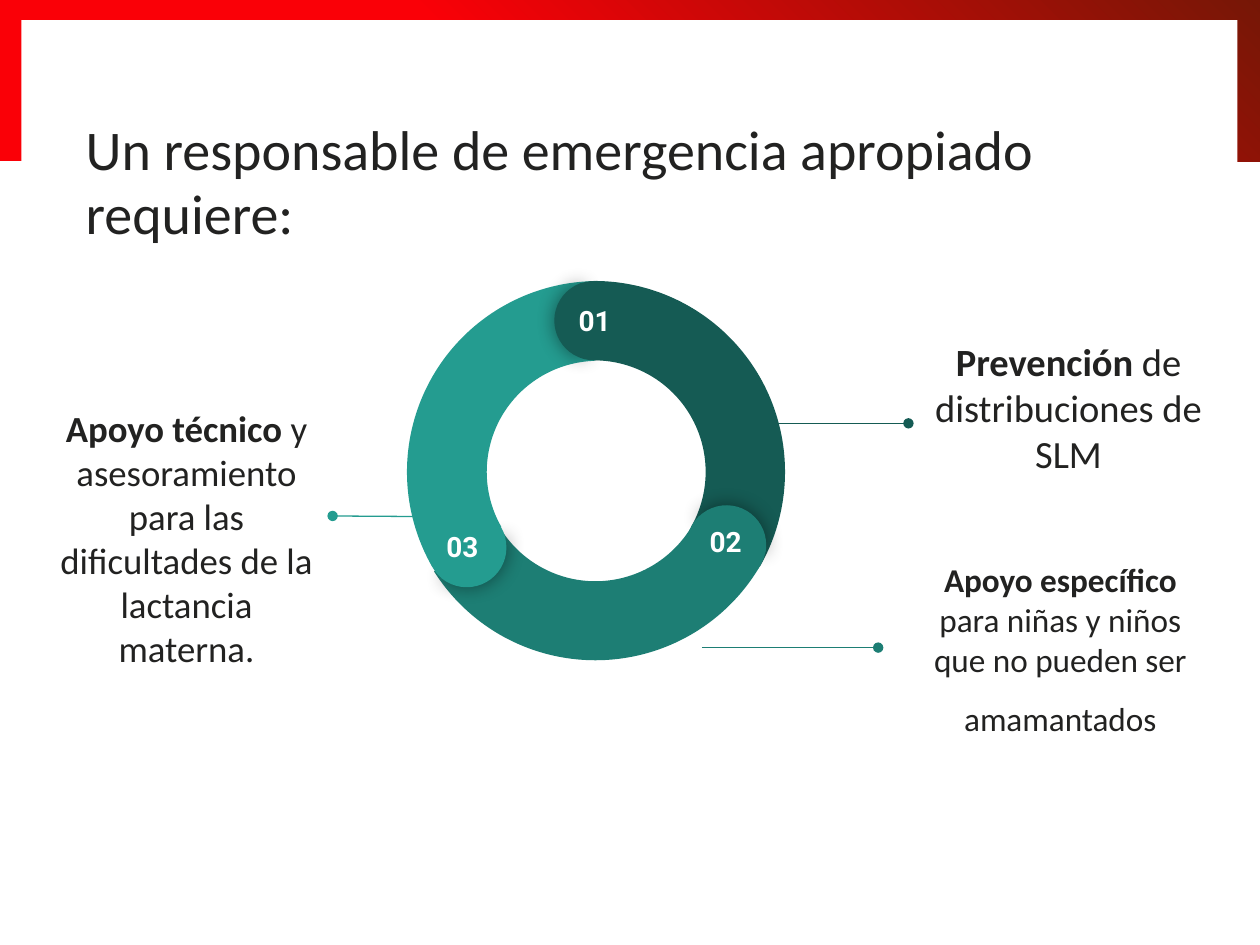
from lxml import etree
from pptx import Presentation
from pptx.dml.color import RGBColor
from pptx.enum.shapes import MSO_CONNECTOR, MSO_SHAPE
from pptx.enum.text import MSO_ANCHOR as Anchor, PP_ALIGN as Align
from pptx.oxml import parse_xml
from pptx.oxml.ns import nsdecls, qn
from pptx.util import Inches, Pt

INK, WHITE = "222221", "FFFFFF"
DARK, MIDDLE, LIGHT = "155B54", "1D7E74", "249C90"
rgb = RGBColor.from_string

deck = Presentation()
deck.slide_width, deck.slide_height = Inches(10), Inches(7.5)
page = deck.slides.add_slide(deck.slide_layouts[6])
shapes = page.shapes


def add_text(paragraphs, at, size, font="Calibri", color=INK, align=Align.CENTER,
             anchor=Anchor.TOP, insets=(0.1, 0.1, 0.1, 0.1), line_spacing=None, gap=0):
    """Each paragraph is a list of (text, bold) pairs; insets run left, top, right, bottom."""
    box = shapes.add_textbox(*map(Inches, at))
    frame = box.text_frame
    frame.word_wrap = True
    frame.vertical_anchor = anchor
    (frame.margin_left, frame.margin_top,
     frame.margin_right, frame.margin_bottom) = map(Inches, insets)
    for index, pieces in enumerate(paragraphs):
        para = frame.add_paragraph() if index else frame.paragraphs[0]
        para.alignment = align
        if line_spacing:
            para.line_spacing = line_spacing
        if index:
            para.space_before = Pt(gap)
        for text, bold in pieces:
            span = para.add_run()
            span.text = text
            span.font.name, span.font.size, span.font.bold = font, Pt(size), bold
            span.font.color.rgb = rgb(color)
    return box


def add_shape(preset, at, color, rotation=0, adjustments=()):
    shape = shapes.add_shape(preset, *map(Inches, at))
    shape.shadow.inherit = False
    shape.fill.solid()
    shape.fill.fore_color.rgb = rgb(color)
    shape.line.fill.background()
    shape.rotation = rotation
    for index, value in enumerate(adjustments):
        shape.adjustments[index] = value
    return shape


# Gradient frame along the top, with the white page area over it
frame_band = add_shape(MSO_SHAPE.RECTANGLE, (0, 0, 10, 1.28), "FA0007")
stops = "".join(
    f'<a:gs pos="{percent * 1000}"><a:srgbClr val="{color}"/></a:gs>'
    for percent, color in ((0, "FA0007"), (40, "FA0007"), (100, "761706")))
solid = frame_band.element.spPr.find(qn("a:solidFill"))
solid.getparent().replace(solid, parse_xml(
    f'<a:gradFill {nsdecls("a")} rotWithShape="1"><a:gsLst>{stops}</a:gsLst>'
    '<a:lin ang="18900000" scaled="0"/></a:gradFill>'))
add_shape(MSO_SHAPE.RECTANGLE, (0.17, 0.16, 9.65, 1.18), WHITE)

# Title
add_text([[("Un responsable de emergencia apropiado requiere:", False)]],
         (0.68, 0.95, 8.83, 1.31), 32, align=Align.LEFT, insets=(0, 0, 0, 0),
         line_spacing=0.95)

# Descriptions around the ring
support_box = add_text(
    [[("Apoyo técnico ", True),
      ("y asesoramiento para las dificultades de la lactancia materna.", False)]],
    (0.32, 3.39, 2.32, 1.41), 21, anchor=Anchor.MIDDLE, insets=(0.1, 0.45, 0.1, 0.1))
add_text([[("Prevención", True), (" de distribuciones de SLM", False)]],
         (7.32, 2.65, 2.32, 1.41), 22, anchor=Anchor.MIDDLE,
         insets=(0.1, 0.1, 0.1, 0.35))
add_text([[("Apoyo específico ", True), ("para niñas y niños que no pueden ser", False)],
          [("amamantados", False)]],
         (7.19, 4.46, 2.45, 1.41), 19, anchor=Anchor.MIDDLE,
         insets=(0.1, 0.1, 0.1, 0.13), gap=11)

# Leader lines with a dot at the outer end
for start, end, y, color, target in (
        (3.34, 2.64, 4.1, LIGHT, support_box),
        (5.8, 7.21, 3.36, DARK, None),
        (5.57, 6.97, 5.14, MIDDLE, None)):
    leader = shapes.add_connector(MSO_CONNECTOR.STRAIGHT, Inches(start), Inches(y),
                                  Inches(end), Inches(y))
    leader.line.color.rgb = rgb(color)
    leader.line.width = Pt(0.75)
    etree.SubElement(leader.line._get_or_add_ln(), qn("a:tailEnd"), type="oval")
    etree.SubElement(leader.element.spPr, qn("a:effectLst"))
    if target is not None:
        leader.end_connect(target, 3)

# Ring segments
for left, top, rotation, end_angle, thickness, color in (
        (3.2, 2.23, 60, 197.816, 0.208, DARK),
        (3.21, 2.21, 180, 196.628, 0.207, MIDDLE),
        (3.23, 2.23, 300, 197.033, 0.209, LIGHT)):
    add_shape(MSO_SHAPE.BLOCK_ARC, (left, top, 3.03, 3.03), color, rotation,
              (126.225, end_angle, thickness))

# Round caps: a shadowed half below, a plain half above
for left, top, rotation, color in (
        (3.39, 4.03, 240.6, LIGHT), (4.4, 2.23, 0.7, DARK), (5.45, 4.01, 120.7, MIDDLE)):
    at = (left, top, 0.63, 0.63)
    cap = add_shape(MSO_SHAPE.PIE, at, color, rotation, (61.904, 149.962))
    cap.element.spPr.find(qn("a:effectLst")).append(parse_xml(
        f'<a:outerShdw {nsdecls("a")} blurRad="{Pt(11.2)}" dist="0" dir="0" '
        'algn="ctr" rotWithShape="0"><a:srgbClr val="000000">'
        '<a:alpha val="43000"/></a:srgbClr></a:outerShdw>'))
    add_shape(MSO_SHAPE.PIE, at, color, round(rotation + 180) % 360 // 60 * 60,
              (40.283, 171.837))

# Step numbers
for number, left, top in (("01", 4.47, 2.31), ("03", 3.42, 4.1), ("02", 5.51, 4.06)):
    add_text([[(number, True)]], (left, top, 0.56, 0.29), 16, font="Roboto",
             color=WHITE, insets=(0.1, 0.1, 0.16, 0.1))

deck.save("out.pptx")
